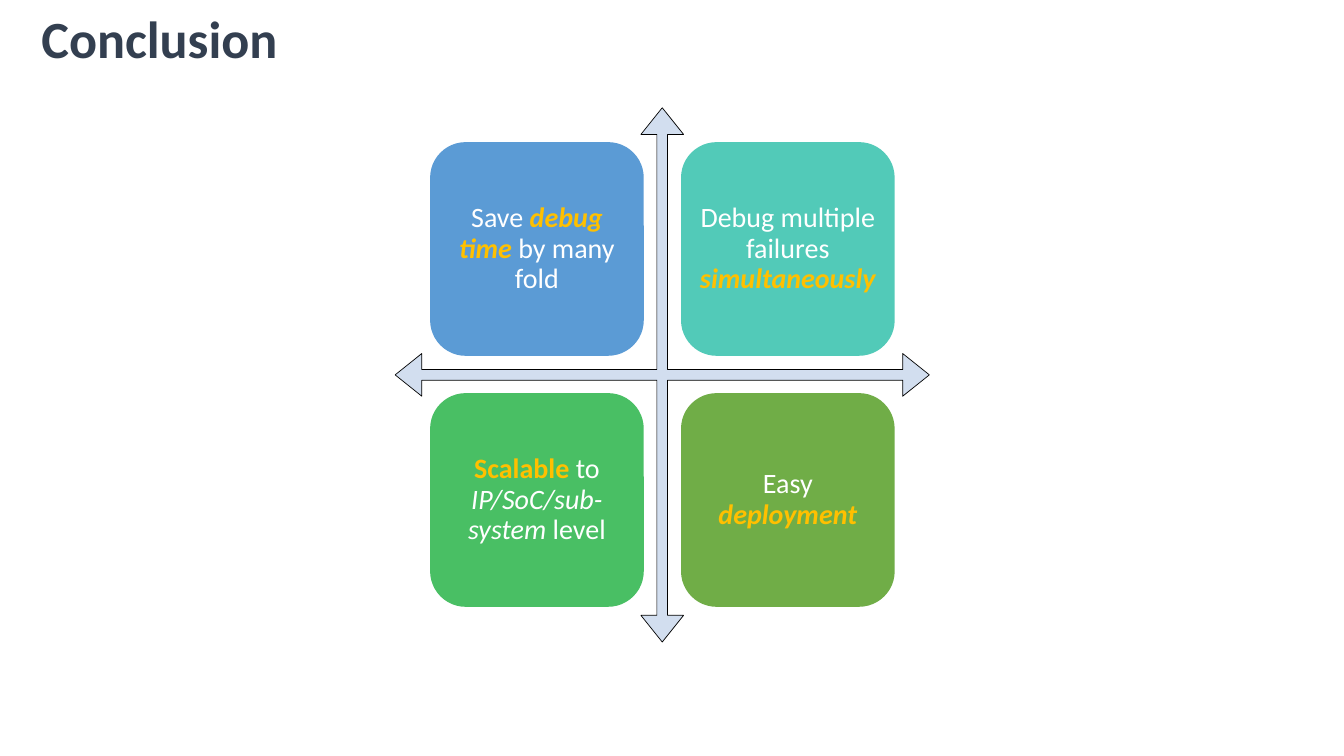
from pptx import Presentation
from pptx import util as u
from pptx.dml import color
from pptx.enum import shapes, text

HUES = ["5B9BD5", "52CAB8", "49BF64", "70AD47"]
GOLD = dict(hue="FFC000", bold=True)
POP = dict(GOLD, slant=True)
POINTS = [
    [("Save ", {}), ("debug time ", POP), ("by many fold", {})],
    [("Debug multiple failures ", {}), ("simultaneously", POP)],
    [("Scalable", GOLD), (" to ", {}), ("IP/SoC/sub-system", dict(slant=True)), (" level", {})],
    [("Easy ", {}), ("deployment", POP)],
]


def rgb(code):
    return color.RGBColor.from_string(code)


def write(para, words, size=20, hue="FFFFFF", bold=False, slant=False):
    run = para.add_run()
    run.text = words
    font = run.font
    font.name, font.size = "Calibri", u.Pt(size)
    font.bold, font.italic = bold, slant
    font.color.rgb = rgb(hue)


class Deck:
    def __init__(self, wide, high):
        self.prs = Presentation()
        self.prs.slide_width, self.prs.slide_height = u.Inches(wide), u.Inches(high)
        self.col, self.row = u.Inches(wide) / 100, u.Inches(high) / 100
        self.slide = self.prs.slides.add_slide(self.prs.slide_layouts[5])

    def place(self, x, y, w, h):
        return int(x * self.col), int(y * self.row), int(w * self.col), int(h * self.row)

    def frame(self, shape, align):
        frame = shape.text_frame
        frame.word_wrap = True
        frame.auto_size = text.MSO_AUTO_SIZE.NONE
        frame.vertical_anchor = text.MSO_ANCHOR.MIDDLE
        para = frame.paragraphs[0]
        para.alignment, para.line_spacing = align, 0.9
        return frame, para

    def title(self, words, *box):
        head = self.slide.shapes.title
        head.left, head.top, head.width, head.height = self.place(*box)
        para = self.frame(head, text.PP_ALIGN.LEFT)[1]
        write(para, words, size=37.3, hue="333F50", bold=True)

    def shape(self, kind, fill, *box):
        shape = self.slide.shapes.add_shape(kind, *self.place(*box))
        shape.shadow.inherit = False
        shape.fill.solid()
        shape.fill.fore_color.rgb = rgb(fill)
        return shape

    def cross(self, *box):
        cross = self.shape(shapes.MSO_SHAPE.QUAD_ARROW, "D2DEEF", *box)
        for i, share in enumerate([0.02, 0.04, 0.05]):
            cross.adjustments[i] = share
        cross.line.color.rgb = rgb("000000")
        cross.line.width = u.Pt(0.5)

    def tile(self, runs, fill, *box):
        tile = self.shape(shapes.MSO_SHAPE.ROUNDED_RECTANGLE, fill, *box)
        tile.line.fill.background()
        frame, para = self.frame(tile, text.PP_ALIGN.CENTER)
        frame.margin_left = frame.margin_right = u.Inches(0.08)
        frame.margin_top = frame.margin_bottom = u.Inches(0.08)
        for words, look in runs:
            write(para, words, **look)


def main():
    deck = Deck(13.33, 7.5)
    deck.title("Conclusion", 2.33, 1.47, 95.72, 8.13)
    deck.cross(29.4, 14.25, 39.75, 70.67)
    for i, (runs, fill) in enumerate(zip(POINTS, HUES)):
        row, col = divmod(i, 2)
        deck.tile(runs, fill, 32 + col * 18.67, 18.8 + row * 33.2, 15.9, 28.27)
    deck.prs.save("out.pptx")


if __name__ == "__main__":
    main()
